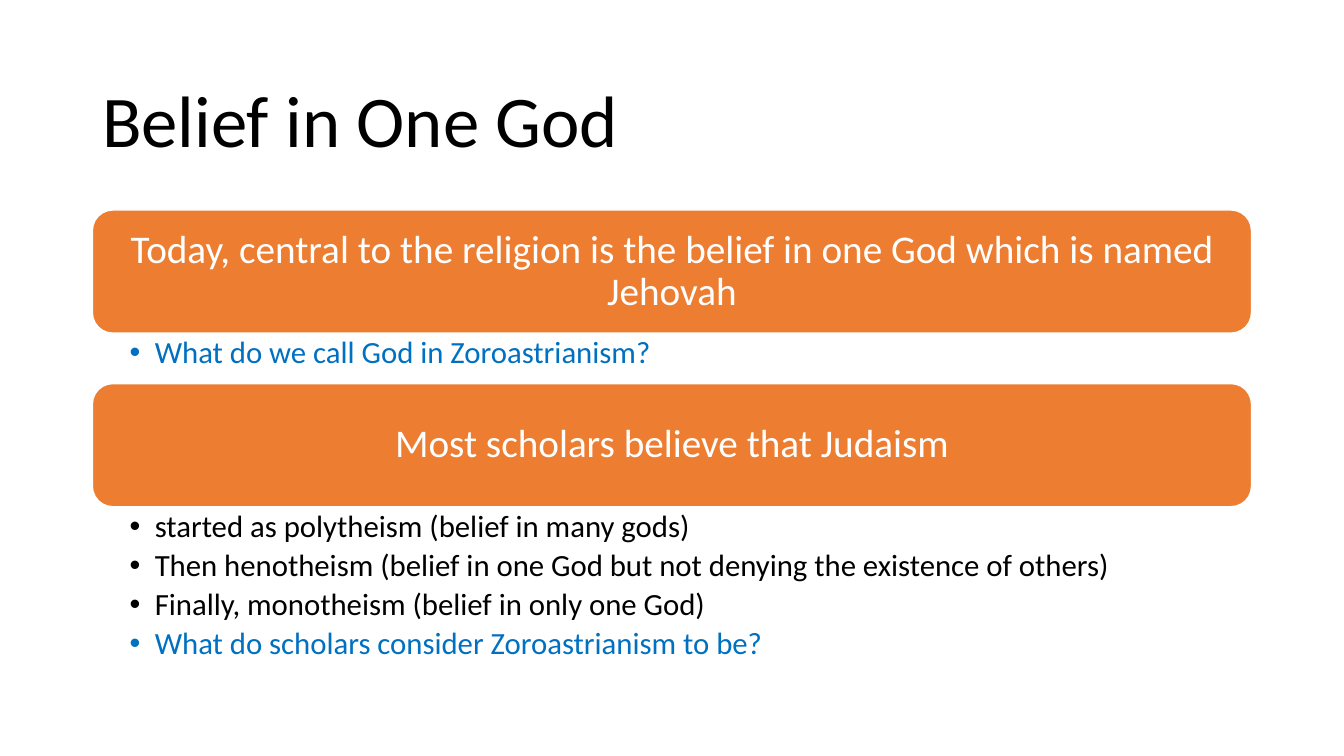
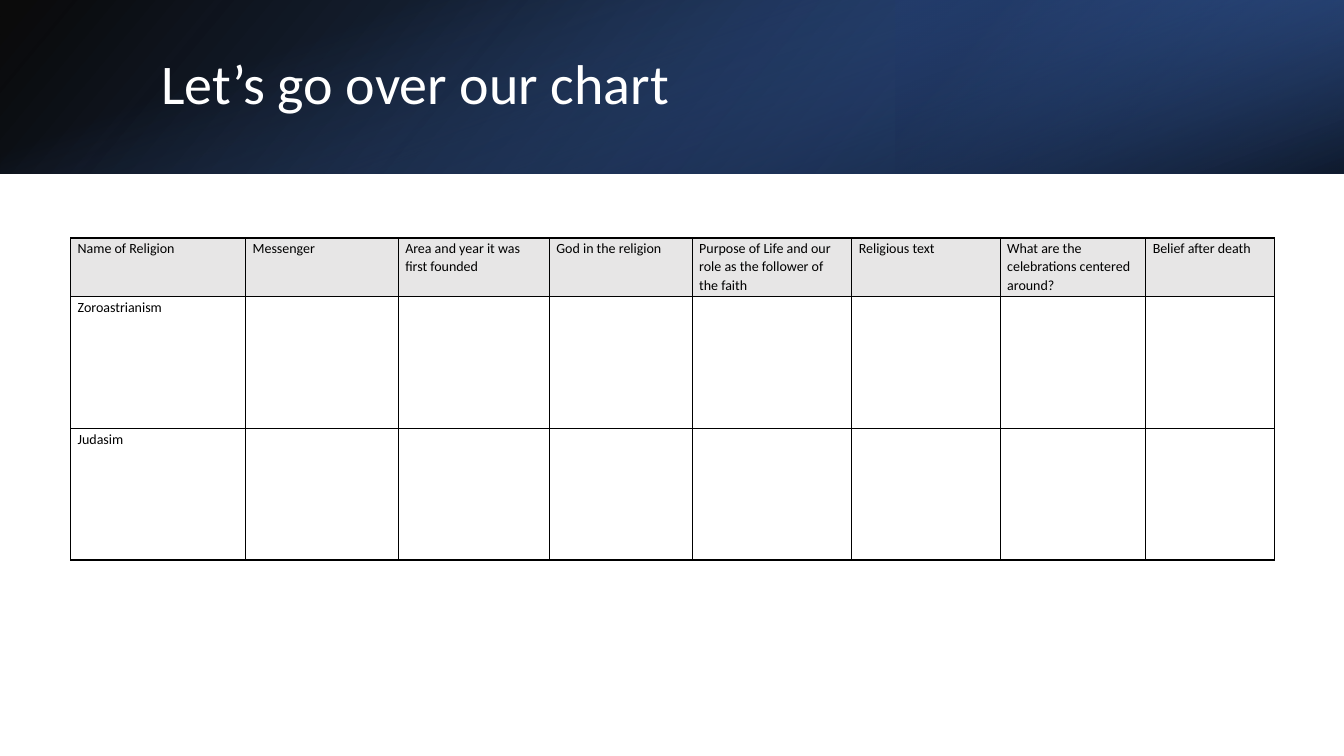
from pptx import Presentation
from pptx.dml.color import RGBColor
from pptx.enum.shapes import MSO_SHAPE
from pptx.enum.text import MSO_ANCHOR
from pptx.oxml import parse_xml
from pptx.oxml.ns import nsdecls, qn
from pptx.util import Pt

RECT = MSO_SHAPE.RECTANGLE
ROUND = MSO_SHAPE.ROUNDED_RECTANGLE
TOP = MSO_ANCHOR.TOP
MIDDLE = MSO_ANCHOR.MIDDLE

FONT = "Calibri"
COLORS = {
    "black": "000000",
    "white": "FFFFFF",
    "orange": "ED7D31",
    "link": "0070C0",
    "head": "E7E6E6",
    "steel": "2F5597",
    "navy": "203864",
    "blue": "4472C4",
}
WIDE, HIGH = 960, 540
BAND = 124

TOPICS = [
    ("Today, central to the religion is the belief in one God which is named Jehovah",
     [("What do we call God in Zoroastrianism?", "link")]),
    ("Most scholars believe that Judaism",
     [("started as polytheism (belief in many gods)", "black"),
      ("Then henotheism (belief in one God but not denying the existence of others)", "black"),
      ("Finally, monotheism (belief in only one God)", "black"),
      ("What do scholars consider Zoroastrianism to be?", "link")]),
]
HEADS = ["Name of Religion", "Messenger", "Area and year it was first founded",
         "God in the religion", "Purpose of Life and our role as the follower of the faith",
         "Religious text", "What are the celebrations centered around?",
         "Belief after death"]
FAITHS = ["Zoroastrianism", "Judasim"]
COLS = [125, 109, 108, 102, 114, 106, 104, 92]
ROWS = [42, 94, 94]


def rgb(name):
    return RGBColor.from_string(COLORS[name])


def points(*sizes):
    return [Pt(size) for size in sizes]


def write(frame, lines, size=10, color="black", space=0.9, after=0, bullet=False):
    frame.word_wrap = True
    for i, (words, tint) in enumerate(lines):
        para = frame.paragraphs[0] if i == 0 else frame.add_paragraph()
        if bullet:
            props = para._p.get_or_add_pPr()
            props.set("marL", str(Pt(18)))
            props.set("indent", str(Pt(-18)))
            props.append(parse_xml(f'<a:buFont {nsdecls("a")} typeface="Arial"/>'))
            props.append(parse_xml(f'<a:buChar {nsdecls("a")} char="•"/>'))
        para.line_spacing = space
        para.space_after = Pt(after)
        run = para.add_run()
        run.text = words
        run.font.name = FONT
        run.font.size = Pt(size)
        run.font.color.rgb = rgb(tint or color)


def inset(frame, left, top, right, bottom, anchor):
    frame.margin_left, frame.margin_top = Pt(left), Pt(top)
    frame.margin_right, frame.margin_bottom = Pt(right), Pt(bottom)
    frame.vertical_anchor = anchor


def title(slide, words, at, size, color):
    frame = slide.shapes.add_textbox(*points(*at)).text_frame
    inset(frame, 7.2, 3.6, 7.2, 3.6, MIDDLE)
    write(frame, [(words, color)], size)


def topic(slide, top, head, items):
    left, width, tall = 66, 828, 88
    card = slide.shapes.add_shape(ROUND, *points(left, top, width, tall))
    card.shadow.inherit = False
    card.fill.solid()
    card.fill.fore_color.rgb = rgb("orange")
    card.line.color.rgb = rgb("white")
    card.line.width = Pt(1)
    inset(card.text_frame, 13, 8.5, 13, 8.5, MIDDLE)
    write(card.text_frame, [(head, "white")], 28)
    room = 8 + 28 * len(items)
    box = slide.shapes.add_textbox(*points(left, top + tall, width, room))
    inset(box.text_frame, 26.6, 3, 16, 3, TOP)
    write(box.text_frame, items, 22, after=4, bullet=True)
    return top + tall + room


def shade(slide, at, stops, angle, turn=0, flip=False):
    panel = slide.shapes.add_shape(RECT, *points(*at))
    panel.shadow.inherit = False
    panel.line.fill.background()
    panel.rotation = turn
    props = panel._element.spPr
    if flip:
        props.find(qn("a:xfrm")).set("flipH", "1")
    panel.fill.gradient()
    marks = "".join(
        f'<a:gs pos="{pos * 1000}"><a:srgbClr val="{COLORS[name]}">'
        f'<a:alpha val="{alpha * 1000}"/></a:srgbClr></a:gs>'
        for pos, name, alpha in stops)
    grad = parse_xml(
        f'<a:gradFill {nsdecls("a")} rotWithShape="1"><a:gsLst>{marks}</a:gsLst>'
        f'<a:lin ang="{angle * 60000}" scaled="0"/></a:gradFill>')
    props.replace(props.find(qn("a:gradFill")), grad)


def border(cell):
    props = cell._tc.get_or_add_tcPr()
    for side in ("lnL", "lnR", "lnT", "lnB"):
        props.append(parse_xml(
            f'<a:{side} {nsdecls("a")} w="{Pt(1)}"><a:solidFill>'
            f'<a:srgbClr val="{COLORS["black"]}"/></a:solidFill></a:{side}>'))


def grid(slide, left, top):
    table = slide.shapes.add_table(
        len(ROWS), len(COLS), *points(left, top, sum(COLS), sum(ROWS))).table
    table.first_row = table.horz_banding = False
    for col, width in zip(table.columns, COLS):
        col.width = Pt(width)
    for row, height in zip(table.rows, ROWS):
        row.height = Pt(height)
    cells = [HEADS] + [[faith] + [""] * (len(COLS) - 1) for faith in FAITHS]
    for r, line in enumerate(cells):
        for c, words in enumerate(line):
            cell = table.cell(r, c)
            inset(cell, 5, 1, 5, 0, TOP)
            border(cell)
            if r == 0:
                cell.fill.solid()
                cell.fill.fore_color.rgb = rgb("head")
            else:
                cell.fill.background()
            if words:
                write(cell.text_frame, [(words, "black")], space=1.07)


def belief(slide):
    title(slide, "Belief in One God", (66, 44, 828, 89), 52, "black")
    top = 150
    for head, items in TOPICS:
        top = topic(slide, top, head, items)


def review(slide):
    shade(slide, (0, 0, WIDE, BAND),
          [(0, "black", 96), (100, "steel", 100)], 140, flip=True)
    shade(slide, (WIDE * 2 / 3, 0, WIDE / 3, BAND),
          [(19, "navy", 68), (100, "blue", 79)], 320, turn=180, flip=True)
    shade(slide, ((WIDE - BAND) / 2, (BAND - WIDE) / 2, BAND, WIDE),
          [(23, "blue", 0), (99, "black", 74)], 340, turn=90)
    title(slide, "Let’s go over our chart", (108, 27, 790, 69), 40, "white")
    grid(slide, 50.5, 170)


def main():
    deck = Presentation()
    deck.slide_width, deck.slide_height = points(WIDE, HIGH)
    for draw in (belief, review):
        draw(deck.slides.add_slide(deck.slide_layouts[6]))
    deck.save("out.pptx")


if __name__ == "__main__":
    main()
